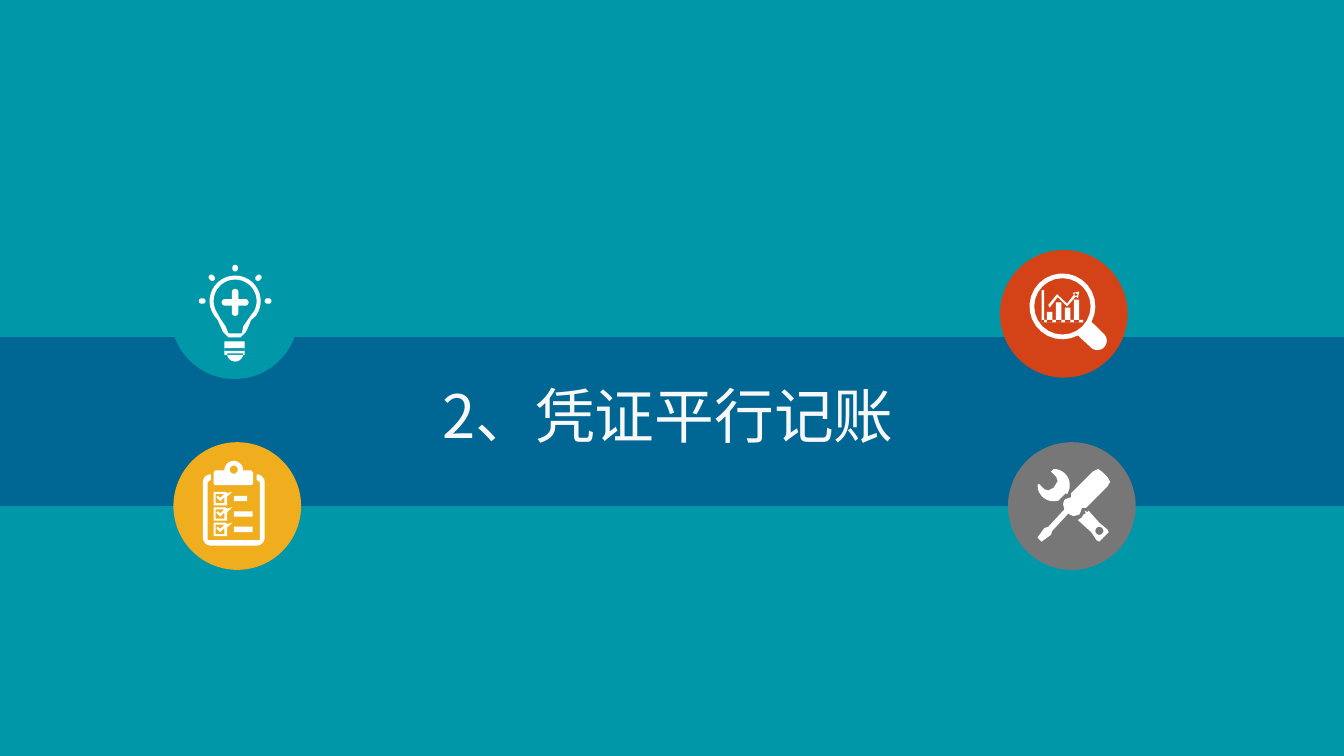
from math import atan2, cos, degrees, radians, sin

from lxml import etree
from pptx import Presentation
from pptx.dml.color import RGBColor
from pptx.enum.shapes import MSO_SHAPE
from pptx.enum.text import MSO_ANCHOR, PP_ALIGN
from pptx.oxml.ns import qn
from pptx.util import Pt

RECT, OVAL = MSO_SHAPE.RECTANGLE, MSO_SHAPE.OVAL
TOP, LEFT = MSO_ANCHOR.TOP, PP_ALIGN.LEFT
FONT = "Noto Sans CJK SC"
TEAL, BLUE, WHITE, PALE = "0098A8", "006794", "FFFFFF", "F8F8F8"
UNIT = 0.72
DISC = 68.4


def color(code):
    return RGBColor.from_string(code)


def arc(x, y, r, start, end, steps=24):
    turns = [radians(start + (end - start) * i / steps) for i in range(steps + 1)]
    return [(x + r * cos(t), y + r * sin(t)) for t in turns]


def disc(x, y, r):
    return arc(x, y, r, 0, 360)


def box(x, y, w, h):
    return [(x, y), (x + w, y), (x + w, y + h), (x, y + h)]


def bar(x1, y1, x2, y2, r):
    turn = degrees(atan2(y2 - y1, x2 - x1))
    return arc(x2, y2, r, turn - 90, turn + 90) + arc(x1, y1, r, turn + 90, turn + 270)


def shift(points, dy):
    return [(x, y + dy) for x, y in points]


def bulb():
    outer = arc(27, 27, 19, 145, 395) + [
        (39, 41), (36, 48), (35, 50), (31, 54), (22, 54), (18, 50), (14, 41)]
    inner = arc(27, 27, 16, 155, 385) + [
        (37, 40), (33, 46), (32, 51), (22, 51), (20, 46), (16, 40)]
    plus = (arc(27, 20.5, 2.5, 180, 360) + [(29.5, 25.5)]
            + arc(34.5, 28, 2.5, -90, 90) + [(29.5, 30.5)]
            + arc(27, 35.5, 2.5, 0, 180) + [(24.5, 30.5)]
            + arc(19.5, 28, 2.5, 90, 270) + [(24.5, 25.5)])
    rays = []
    for turn in range(180, 361, 45):
        dx, dy = cos(radians(turn)), sin(radians(turn))
        rays.append(bar(27 + 24 * dx, 27 + 24 * dy, 27 + 25 * dx, 27 + 25 * dy, 2))
    base = [box(19, 57, 15, 7), box(19, 62, 15, 5), arc(27, 66, 6, 0, 180)]
    return [outer, inner, plus, *base, *rays]


def board():
    frame = (arc(6, 16, 6, 270, 180) + arc(6, 57, 6, 180, 90)
             + arc(40, 57, 6, 90, 0) + arc(40, 16, 6, 0, -90)
             + [(40, 14), (42.5, 16), (42.5, 59), (3.5, 59), (3.5, 16), (6, 14)])
    clip = arc(23, 7, 7, 180, 360) + [
        (36, 7), (37.5, 9), (37.5, 17), (36, 18), (9, 18), (8, 17), (8, 9), (9, 7)]
    edge = [(8, 0), (17, 0), (18, 1), (22, 0), (18, 3.5), (18, 10), (8, 10)]
    tick = [(9.5, 1.5), (16, 1.5), (13, 4.5), (11, 3), (10, 4), (13, 7),
            (16, 4), (16, 8.5), (9.5, 8.5)]
    paths = [frame, clip, disc(23, 6.5, 3)]
    for row, width in enumerate((10, 14, 14)):
        y = 23 + 11.5 * row
        paths += [shift(edge, y), shift(tick, y), box(23, y + 3, width, 4)]
    return paths


def lens():
    outer = arc(24.5, 25, 24.5, 62, 388) + arc(50.5, 50.5, 7, -45, 135)
    trend = [(15, 26), (14, 24), (20.5, 16), (28, 23), (34, 15), (36, 16),
             (28, 25), (21, 18)]
    head = [(32, 15), (37, 14), (36, 19)]
    bars = [box(13 + 6.67 * i, y, 4, 37 - y) for i, y in enumerate((29, 22, 26, 20))]
    axes = [box(9, 13, 2, 24), box(9, 35, 31, 2)]
    return [outer, disc(24.5, 25, 21), trend, head, *bars, *axes]


def tools():
    driver = [(25, 18), (41, 2), (45, 0), (48, 2), (52, 6), (54, 9.5), (52, 13),
              (36, 29), (33, 29), (32, 32), (31, 34), (27, 35), (24, 34), (23, 33),
              (11, 46), (10, 49), (3, 54), (0, 51), (5, 44), (8, 43), (20, 30),
              (19, 26), (20, 23), (22, 22), (25, 21)]
    wrench = (arc(12, 12, 12, 270, 375) + [(22, 19), (21, 18), (18, 21), (16, 23)]
              + arc(12, 12, 12, 70, 165)
              + [(0, 12), (1, 11), (5, 15), (8, 16), (12, 14), (15, 9), (14, 6), (10, 2)])
    grip = [(35, 31), (36, 33), (34, 34), (33, 36), (30, 38), (40, 47), (44, 53),
            (46, 54), (53, 47), (52, 45), (46, 40), (38, 31), (37, 32)]
    return [driver, wrench, grip, disc(46, 46, 3)]


class Deck:
    """Holds the style and the current slide."""

    def __init__(self):
        self.file = Presentation()
        self.file.slide_width, self.file.slide_height = Pt(720), Pt(405)
        self.slide = self.file.slides.add_slide(self.file.slide_layouts[6])
        fill = self.slide.background.fill
        fill.solid()
        fill.fore_color.rgb = color(TEAL)

    def paint(self, shape, fill, line=None):
        shape.shadow.inherit = False
        shape.fill.solid()
        shape.fill.fore_color.rgb = color(fill)
        if line:
            shape.line.color.rgb = color(line)
            shape.line.width = Pt(0.75)
        else:
            shape.line.fill.background()

    def band(self, y, height, fill):
        shape = self.slide.shapes.add_shape(RECT, 0, Pt(y), Pt(720), Pt(height))
        self.paint(shape, fill, fill)

    def title(self, text, x, y, width, height):
        frame = self.slide.shapes.add_textbox(Pt(x), Pt(y), Pt(width), Pt(height)).text_frame
        frame.word_wrap, frame.vertical_anchor = True, TOP
        frame.margin_left = frame.margin_right = Pt(5.04)
        frame.margin_top = frame.margin_bottom = Pt(2.88)
        frame.text = text
        frame.paragraphs[0].alignment = LEFT
        run = frame.paragraphs[0].runs[0]
        run.font.size, run.font.name = Pt(32), FONT
        run.font.color.rgb = color(PALE)
        etree.SubElement(run.font._element, qn("a:ea"), typeface=FONT)

    def badge(self, x, y, fill, dx, dy, paths):
        shapes = self.slide.shapes.add_group_shape().shapes
        self.paint(shapes.add_shape(OVAL, Pt(x), Pt(y), Pt(DISC), Pt(DISC)), fill)
        paths = [[(Pt(x + dx + UNIT * a), Pt(y + dy + UNIT * b)) for a, b in path]
                 for path in paths]
        pen = shapes.build_freeform(*paths[0][0])
        for path in paths:
            if path is not paths[0]:
                pen.move_to(*path[0])
            pen.add_line_segments(path[1:], close=True)
        self.paint(pen.convert_to_shape(), WHITE)


def main():
    deck = Deck()
    deck.band(180.72, 90, BLUE)
    deck.title("2、凭证平行记账", 231.84, 200.16, 256.32, 43.92)
    deck.badge(91.44, 134.64, TEAL, 15.12, 7.2, bulb())
    deck.badge(92.88, 236.88, "F0AD1E", 15.84, 10.08, board())
    deck.badge(535.68, 133.92, "D44318", 15.84, 12.24, lens())
    deck.badge(540, 236.88, "777777", 15.84, 14.4, tools())
    deck.file.save("out.pptx")


if __name__ == "__main__":
    main()
